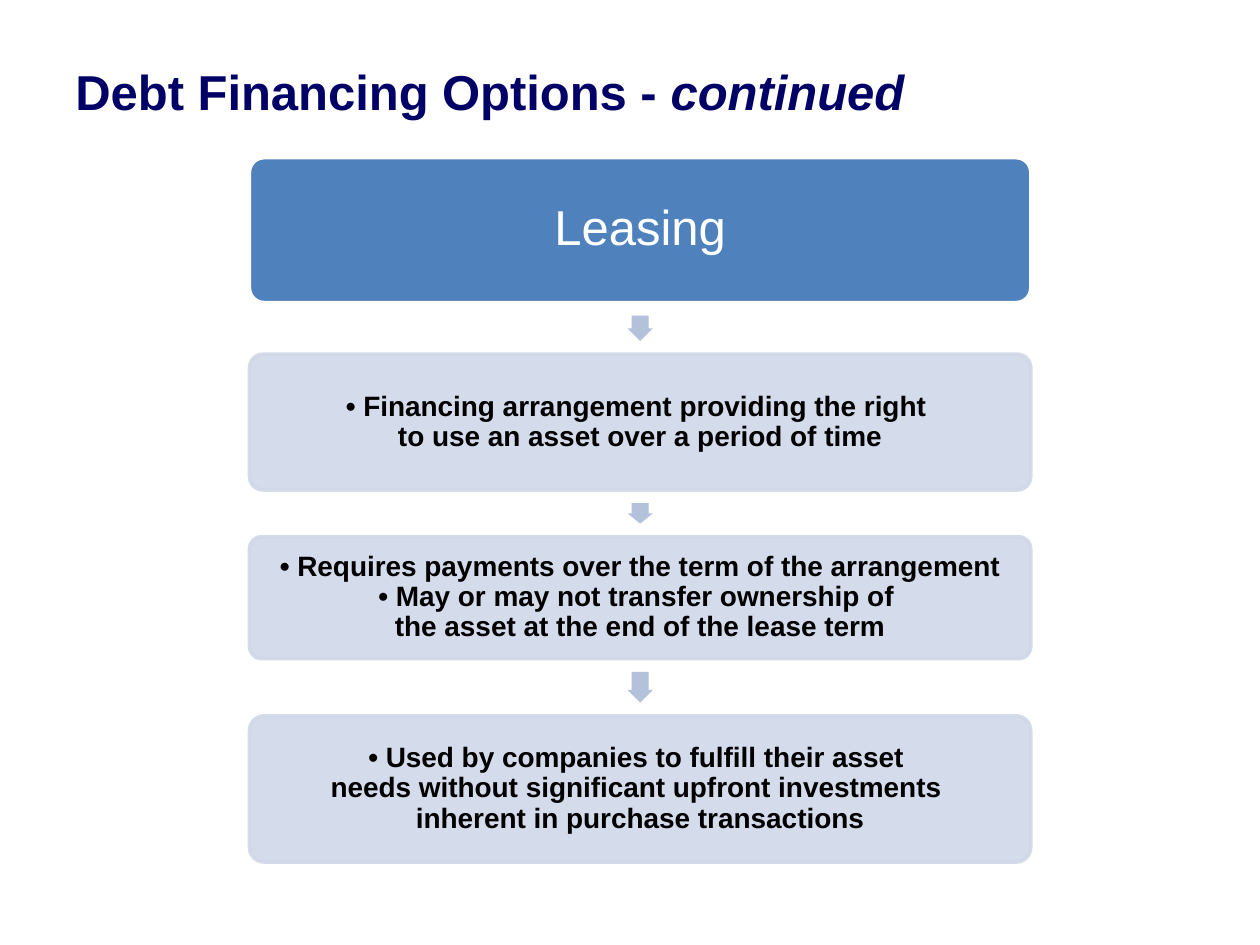
from dataclasses import dataclass

from lxml import etree
from pptx import Presentation
from pptx.dml.color import RGBColor
from pptx.enum.shapes import MSO_SHAPE
from pptx.enum.text import MSO_ANCHOR, PP_ALIGN
from pptx.oxml.ns import qn
from pptx.util import Cm, Pt

ROUND = MSO_SHAPE.ROUNDED_RECTANGLE
ARROW = MSO_SHAPE.RIGHT_ARROW
MIDDLE = MSO_ANCHOR.MIDDLE
LEFT = PP_ALIGN.LEFT
CENTER = PP_ALIGN.CENTER


@dataclass(frozen=True)
class Theme:
    font: str = "Arial"
    navy: str = "000066"
    blue: str = "4F81BD"
    pale: str = "D0D8E8"
    steel: str = "B3C1DB"
    white: str = "FFFFFF"
    black: str = "000000"
    large: int = 28
    body: int = 16


class Deck:
    def __init__(self, slide, theme):
        self.slide = slide
        self.theme = theme

    def paint(self, fill, color, alpha=100):
        fill.solid()
        fill.fore_color.rgb = RGBColor.from_string(color)
        if alpha < 100:
            for tint in fill._xPr.iter(qn("a:srgbClr")):
                if tint.find(qn("a:alpha")) is None:
                    etree.SubElement(tint, qn("a:alpha"), val=str(alpha * 1000))

    def run(self, para, text, size, color, bold=False, italic=False):
        run = para.add_run()
        run.text = text
        font = run.font
        font.name = self.theme.font
        font.size = Pt(size)
        font.bold = bold
        font.italic = italic
        font.color.rgb = RGBColor.from_string(color)

    def title(self, plain, slant):
        box = self.slide.shapes.add_textbox(Cm(1.27), Cm(1.14), Cm(17.98), Cm(1.4))
        frame = box.text_frame
        frame.word_wrap = True
        frame.vertical_anchor = MIDDLE
        para = frame.paragraphs[0]
        para.alignment = LEFT
        look = self.theme.large, self.theme.navy, True
        self.run(para, plain, *look)
        self.run(para, slant, *look, italic=True)

    def card(self, left, top, width, height, paras, head=False):
        theme = self.theme
        card = self.slide.shapes.add_shape(ROUND, Cm(left), Cm(top), Cm(width), Cm(height))
        card.shadow.inherit = False
        card.adjustments[0] = 0.1
        alpha = 100 if head else 90
        self.paint(card.fill, theme.blue if head else theme.pale, alpha)
        self.paint(card.line.fill, theme.white if head else theme.pale, alpha)
        card.line.width = Pt(2)
        frame = card.text_frame
        frame.word_wrap = True
        frame.vertical_anchor = MIDDLE
        frame.margin_left = frame.margin_right = Cm(0.1)
        frame.margin_top = frame.margin_bottom = Cm(0.1)
        look = (theme.large, theme.white) if head else (theme.body, theme.black, True)
        for i, lines in enumerate(paras):
            para = frame.add_paragraph() if i else frame.paragraphs[0]
            para.alignment = CENTER
            para.line_spacing = 0.9
            for j, line in enumerate(lines):
                if j:
                    para.add_line_break()
                self.run(para, line, *look)

    def arrow(self, mid, level, length, girth=0.51):
        arrow = self.slide.shapes.add_shape(
            ARROW, Cm(mid - length / 2), Cm(level - girth / 2), Cm(length), Cm(girth))
        arrow.shadow.inherit = False
        arrow.rotation = 90
        arrow.adjustments[0] = 0.667
        arrow.adjustments[1] = 0.5
        self.paint(arrow.fill, self.theme.steel)
        arrow.line.fill.background()


def main():
    show = Presentation()
    show.slide_width = Cm(25.4)
    show.slide_height = Cm(19.05)
    deck = Deck(show.slides.add_slide(show.slide_layouts[6]), Theme())

    left, width = 5.03, 15.75
    steps = [
        (3.18, 2.92, [["Leasing"]]),
        (7.14, 2.74, [["• Financing arrangement providing the right ",
                       "to use an asset over a period of time"]]),
        (10.82, 2.46, [["• Requires payments over the term of the arrangement"],
                       ["• May or may not transfer ownership of ",
                        "the asset at the end of the lease term"]]),
        (14.43, 2.95, [["• Used by companies to fulfill their asset ",
                        "needs without significant upfront investments ",
                        "inherent in purchase transactions"]]),
    ]
    base = None
    for top, height, paras in steps:
        if base is not None:
            deck.arrow(left + width / 2, (base + top) / 2, top - base - 0.53)
        deck.card(left, top, width, height, paras, head=base is None)
        base = top + height

    deck.title("Debt Financing Options - ", "continued")
    show.save("out.pptx")


if __name__ == "__main__":
    main()
